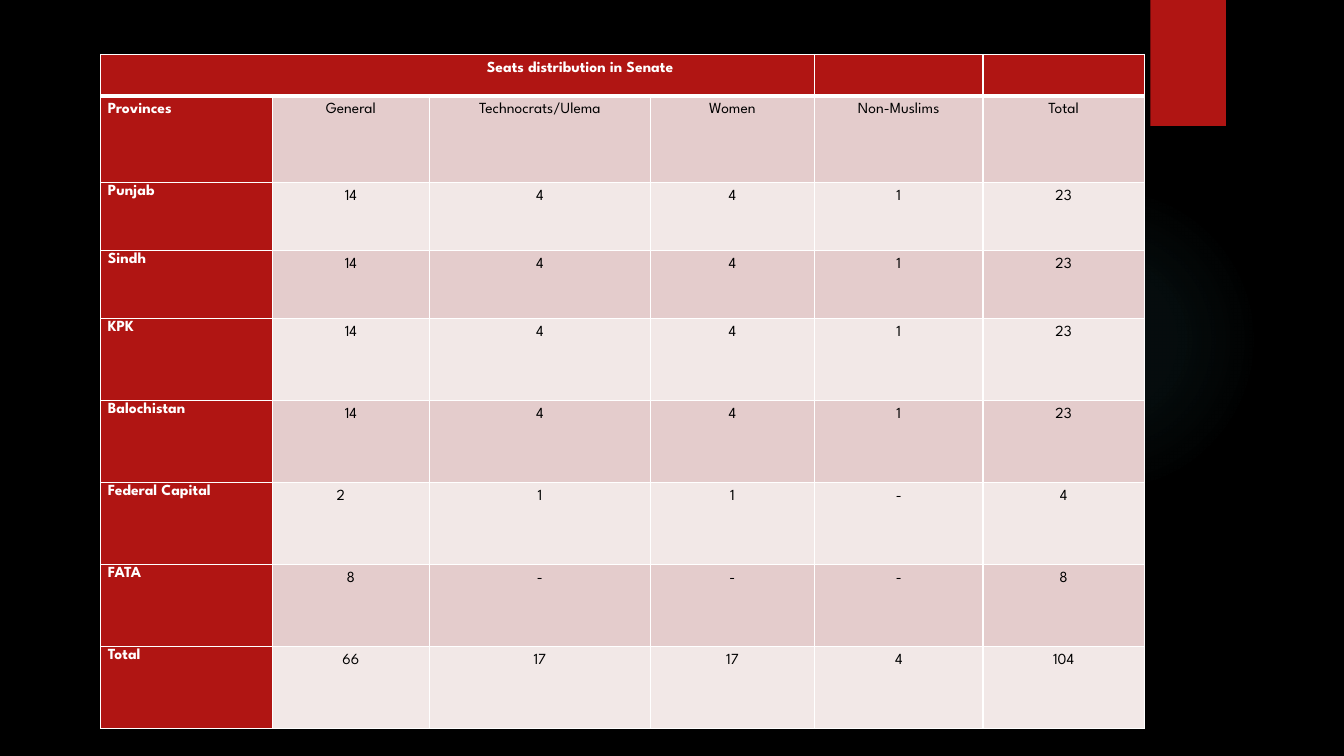
"""Build the slide showing how Senate seats are shared among the provinces."""
from dataclasses import dataclass

from lxml import etree
from pptx import Presentation
from pptx import util as u
from pptx.dml.color import RGBColor
from pptx.enum import shapes, text
from pptx.oxml import parse_xml
from pptx.oxml.ns import nsdecls, qn

UNIT = u.Inches(0.01)
SLIDE_COLS, SLIDE_ROWS = 1333, 750
FONT = "League Spartan"
BLACK = RGBColor(0x00, 0x00, 0x00)
WHITE = RGBColor(0xFF, 0xFF, 0xFF)
RED = RGBColor(0xB0, 0x15, 0x13)
ROSE = RGBColor(0xE4, 0xCC, 0xCC)
PALE = RGBColor(0xF2, 0xE8, 0xE7)
TEAL = RGBColor(0x50, 0xB9, 0xC1)
GLOW_STOPS = ((0, 7), (36, 6), (69, 0))
LEFT, CENTER = text.PP_ALIGN.LEFT, text.PP_ALIGN.CENTER

TITLE = "Seats distribution in Senate"
TITLE_SPAN = 4
TITLE_INDENT = 243
CAPITAL_INDENT = 57
CELL_INSET = 7
COL_WIDTHS = (170, 156, 219, 163, 167, 160)
ROW_HEIGHTS = (41, 86, 67.5, 67.5) + (81.3,) * 5
SEATS = (
    ("Provinces", "General", "Technocrats/Ulema", "Women", "Non-Muslims", "Total"),
    ("Punjab", "14", "4", "4", "1", "23"),
    ("Sindh", "14", "4", "4", "1", "23"),
    ("KPK", "14", "4", "4", "1", "23"),
    ("Balochistan", "14", "4", "4", "1", "23"),
    ("Federal Capital", "2", "1", "1", "-", "4"),
    ("FATA", "8", "-", "-", "-", "8"),
    ("Total", "66", "17", "17", "4", "104"),
)


@dataclass(frozen=True)
class Box:
    """A rectangle in grid columns and rows."""
    col: float
    row: float
    cols: float
    rows: float

    def place(self) -> tuple[int, ...]:
        """Return left, top, width and height as lengths."""
        return tuple(int(UNIT * n) for n in (self.col, self.row, self.cols, self.rows))


GLOW = Box(941, 183, 308, 308)
TAB = Box(1141, 0, 75, 125)
TABLE = Box(100, 54, sum(COL_WIDTHS), sum(ROW_HEIGHTS))


def add_box(s, box: Box, kind, color: RGBColor):
    """Draw a plain filled shape."""
    sp = s.shapes.add_shape(kind, *box.place())
    sp.shadow.inherit = False
    sp.fill.solid()
    sp.fill.fore_color.rgb = color
    sp.line.fill.background()
    return sp


def add_glow(s) -> None:
    """Draw the faint circular glow."""
    sp = add_box(s, GLOW, shapes.MSO_SHAPE.OVAL, TEAL)
    stops = "".join(
        f'<a:gs pos="{pos * 1000}"><a:srgbClr val="{TEAL}">'
        f'<a:alpha val="{alpha * 1000}"/></a:srgbClr></a:gs>'
        for pos, alpha in GLOW_STOPS)
    grad = parse_xml(
        f'<a:gradFill {nsdecls("a")}><a:gsLst>{stops}</a:gsLst><a:path path="circle">'
        '<a:fillToRect l="50000" t="50000" r="50000" b="50000"/></a:path></a:gradFill>')
    solid = sp.element.spPr.find(qn("a:solidFill"))
    solid.getparent().replace(solid, grad)


def write(cell, words: str, *, color: RGBColor = BLACK, bold: bool = False,
          align=CENTER, spacing: float = 1.5, indent: int = 0) -> None:
    """Put formatted words in a cell."""
    cell.margin_left = cell.margin_right = UNIT * CELL_INSET
    cell.margin_top = cell.margin_bottom = 0
    p = cell.text_frame.paragraphs[0]
    p.alignment, p.line_spacing = align, spacing
    p.font.size = u.Pt(11)
    if indent:
        p._p.get_or_add_pPr().set("marL", str(UNIT * indent))
    if words:
        r = p.add_run()
        r.text = words
        r.font.name, r.font.size, r.font.bold = FONT, u.Pt(11), bold
        r.font.color.rgb = color


def paint(cell, color: RGBColor, *, top: int = 1, bottom: int = 1) -> None:
    """Fill a cell and rule its four sides in white."""
    cell.fill.solid()
    cell.fill.fore_color.rgb = color
    tc_pr = cell._tc.get_or_add_tcPr()
    sides = (("lnL", 1), ("lnR", 1), ("lnT", top), ("lnB", bottom))
    for i, (side, points) in enumerate(sides):
        ln = etree.Element(qn(f"a:{side}"), w=str(u.Pt(points)))
        fill = etree.SubElement(ln, qn("a:solidFill"))
        etree.SubElement(fill, qn("a:srgbClr"), val=str(WHITE))
        tc_pr.insert(i, ln)


def add_seats(s) -> None:
    """Draw the table of seats."""
    table = s.shapes.add_table(
        len(ROW_HEIGHTS), len(COL_WIDTHS), *TABLE.place()).table
    table.first_row = table.horz_banding = False
    for column, width in zip(table.columns, COL_WIDTHS):
        column.width = UNIT * width
    for row, height in zip(table.rows, ROW_HEIGHTS):
        row.height = int(UNIT * height)

    for c in range(len(COL_WIDTHS)):
        cell = table.cell(0, c)
        paint(cell, RED, bottom=3)
        write(cell, "" if c else TITLE, color=WHITE, bold=True,
              indent=0 if c else TITLE_INDENT)
    table.cell(0, 0).merge(table.cell(0, TITLE_SPAN - 1))

    for i, (name, *counts) in enumerate(SEATS, start=1):
        top = 3 if i == 1 else 1
        head = table.cell(i, 0)
        paint(head, RED, top=top)
        write(head, name, color=WHITE, bold=True, align=LEFT,
              spacing=1.5 if i == 1 else 1.15)
        for c, count in enumerate(counts, start=1):
            cell = table.cell(i, c)
            paint(cell, ROSE if i % 2 else PALE, top=top)
            if name == "Federal Capital" and c == 1:
                write(cell, count, align=LEFT, indent=CAPITAL_INDENT)
            else:
                write(cell, count)


def main() -> None:
    """Build and save the slide."""
    prs = Presentation()
    prs.slide_width, prs.slide_height = UNIT * SLIDE_COLS, UNIT * SLIDE_ROWS
    s = prs.slides.add_slide(prs.slide_layouts[6])
    s.background.fill.solid()
    s.background.fill.fore_color.rgb = BLACK
    add_glow(s)
    add_box(s, TAB, shapes.MSO_SHAPE.RECTANGLE, RED)
    add_seats(s)
    prs.save("out.pptx")


if __name__ == "__main__":
    main()
